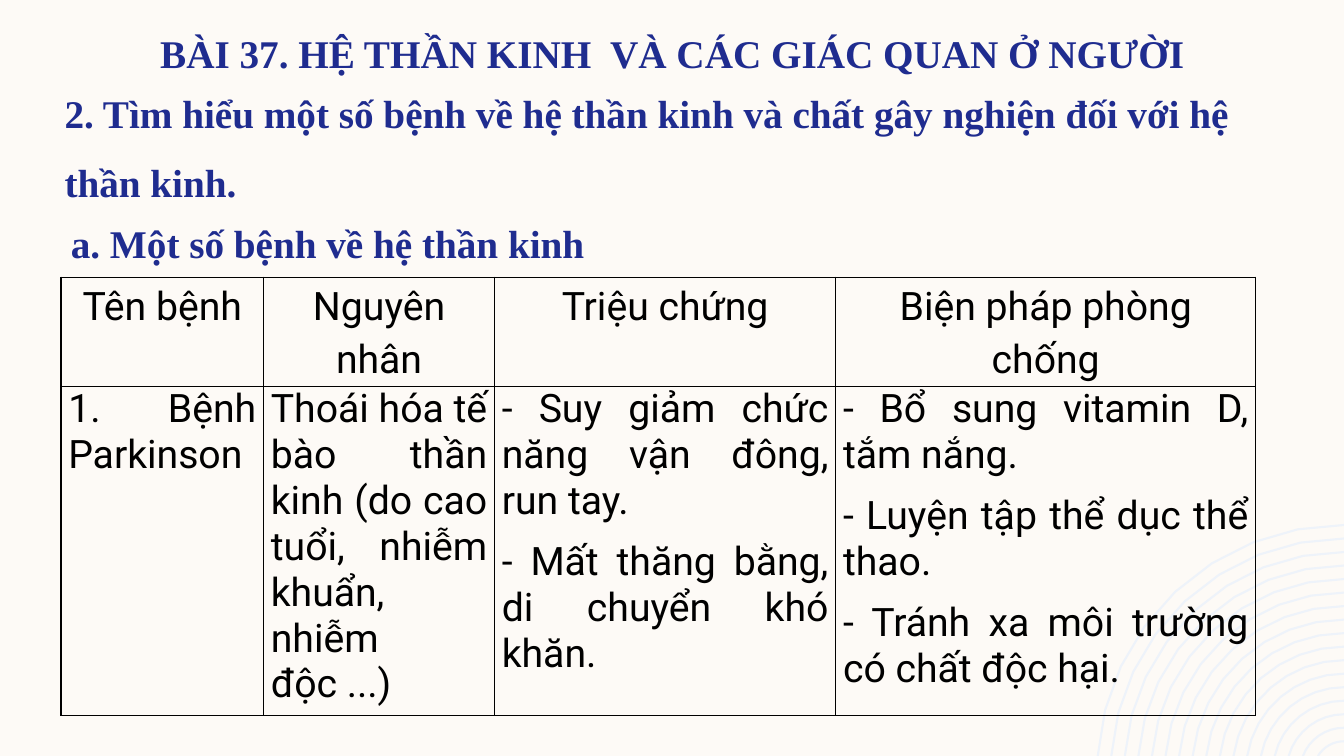
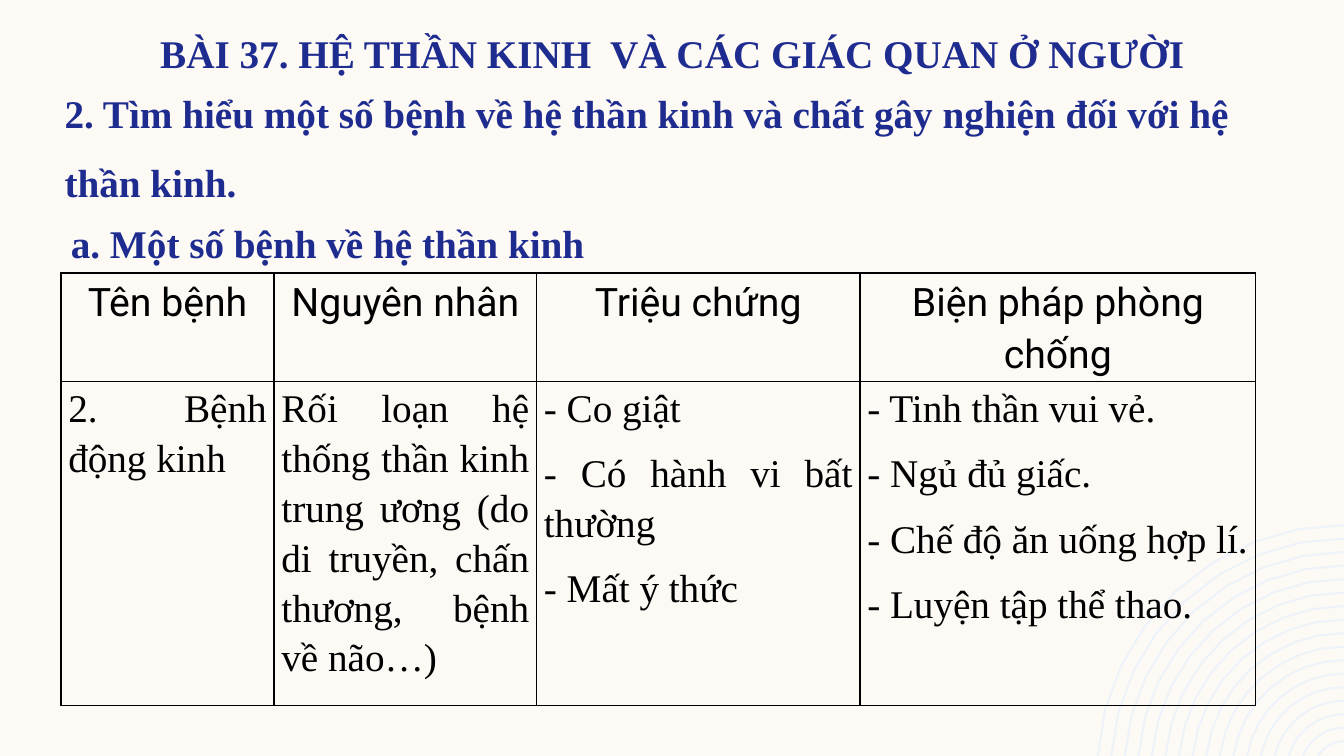
from math import asin, cos, pi, sin

from lxml import etree
from pptx import Presentation
from pptx.dml.color import RGBColor
from pptx.enum.text import PP_ALIGN as Align
from pptx.util import Pt

PX = 9525  # EMU in one px, 96 px to the inch
WIDTH, HEIGHT = 1280, 720
CREAM, NAVY, PALE_BLUE, BLACK = "FDFAF6", "1F2C8F", "EEF3FA", "000000"
SERIF, SANS = "Times New Roman", "Roboto"
DRAWING = "http://schemas.openxmlformats.org/drawingml/2006/main"

# Rings in the bottom right corner
RING_COUNT, RING_WIDTH = 17, 2
OUTER_RADIUS, INNER_RADIUS = 235, 29
CENTRE_X, CENTRE_Y = WIDTH, 735
ARC_STEPS = 8

# left, top, width, height, top inset, alignment, line spacing, before, after, text
HEADINGS = [
    (0, 8, 1280, 62, 0, Align.CENTER, Pt(48.8), 0, 0,
     "BÀI 37. HỆ THẦN KINH  VÀ CÁC GIÁC QUAN Ở NGƯỜI"),
    (52, 65, 1184, 62, 0, Align.LEFT, Pt(48.8), 0, 0,
     "2. Tìm hiểu một số bệnh về hệ thần kinh và chất gây nghiện đối với hệ thần kinh."),
    (58, 197, 640, 59, 5, Align.JUSTIFY, 1.15, 8, 3,
     "a. Một số bệnh về hệ thần kinh"),
]

TABLE_LEFT = 58
TABLE_HEADER = ["Tên bệnh", "Nguyên nhân", "Triệu chứng", "Biện pháp phòng chống"]
DISEASES = [
    {
        "top": 264, "columns": [193, 220, 325, 400], "rows": [104, 313],
        "font": SANS, "line_spacing": 1.0,
        "cells": [
            "1. Bệnh Parkinson",
            "Thoái hóa tế bào thần kinh (do cao tuổi, nhiễm khuẩn, nhiễm độc ...)",
            "- Suy giảm chức năng vận đông, run tay.\n"
            "- Mất thăng bằng, di chuyển khó khăn.",
            "- Bổ sung vitamin D, tắm nắng.\n"
            "- Luyện tập thể dục thể thao.\n"
            "- Tránh xa môi trường có chất độc hại.",
        ],
    },
    {
        "top": 260, "columns": [203, 250, 308, 377], "rows": [103, 309],
        "font": SERIF, "line_spacing": 1.15,
        "cells": [
            "2. Bệnh động kinh",
            "Rối loạn hệ thống thần kinh trung ương (do di truyền, chấn thương, bệnh về não…)",
            "- Co giật\n- Có hành vi bất thường\n- Mất ý thức",
            "- Tinh thần vui vẻ.\n- Ngủ đủ giấc.\n- Chế độ ăn uống hợp lí.\n- Luyện tập thể thao.",
        ],
    },
]


def rgb(hex_colour):
    return RGBColor.from_string(hex_colour)


def format_text(text_frame, font_name, colour, bold, align, line_spacing, before, after):
    for paragraph in text_frame.paragraphs:
        paragraph.alignment = align
        paragraph.line_spacing = line_spacing
        paragraph.space_before, paragraph.space_after = Pt(before), Pt(after)
        for run in paragraph.runs:
            run.font.name, run.font.size, run.font.bold = font_name, Pt(28), bold
            run.font.color.rgb = rgb(colour)


presentation = Presentation()
presentation.slide_width, presentation.slide_height = WIDTH * PX, HEIGHT * PX
background = presentation.slide_master.background.fill
background.solid()
background.fore_color.rgb = rgb(CREAM)
blank_layout = presentation.slide_layouts[6]
slides = [presentation.slides.add_slide(blank_layout) for _ in DISEASES]

# Shared parts: drawn on the first slide, then moved to the layout
shapes = slides[0].shapes
arcs = []
for ring in range(RING_COUNT):
    radius = OUTER_RADIUS - ring * (OUTER_RADIUS - INNER_RADIUS) / (RING_COUNT - 1)
    start = asin((CENTRE_Y - HEIGHT) / radius)  # where the ring leaves the slide
    angles = [start + (pi / 2 - start) * step / ARC_STEPS for step in range(ARC_STEPS + 1)]
    arcs.append([((CENTRE_X - radius * cos(angle)) * PX, (CENTRE_Y - radius * sin(angle)) * PX)
                 for angle in angles])
builder = shapes.build_freeform(*arcs[0][0])
for arc in arcs:
    if arc is not arcs[0]:
        builder.move_to(*arc[0])
    builder.add_line_segments(arc[1:], close=False)
rings = builder.convert_to_shape()
rings.shadow.inherit = False
rings.fill.background()
rings.line.color.rgb = rgb(PALE_BLUE)
rings.line.width = RING_WIDTH * PX

for left, top, width, height, inset, align, spacing, before, after, text in HEADINGS:
    heading = shapes.add_textbox(left * PX, top * PX, width * PX, height * PX)
    text_frame = heading.text_frame
    text_frame.word_wrap = True
    text_frame.margin_top = inset * PX
    text_frame.text = text
    format_text(text_frame, SERIF, NAVY, True, align, spacing, before, after)

for shape in list(shapes):
    blank_layout.shapes._spTree.append(shape._element)

for slide, disease in zip(slides, DISEASES):
    columns, rows = disease["columns"], disease["rows"]
    table = slide.shapes.add_table(
        len(rows), len(columns), TABLE_LEFT * PX, disease["top"] * PX,
        sum(columns) * PX, sum(rows) * PX).table
    table.first_row = table.horz_banding = False
    for column, width in zip(table.columns, columns):
        column.width = width * PX
    for row, height in zip(table.rows, rows):
        row.height = height * PX

    row_styles = [
        (TABLE_HEADER, SANS, Align.CENTER, 1.15),
        (disease["cells"], disease["font"], Align.JUSTIFY, disease["line_spacing"]),
    ]
    for row, (texts, font_name, align, spacing) in zip(table.rows, row_styles):
        for cell, text in zip(row.cells, texts):
            cell.margin_left = cell.margin_right = 7 * PX
            cell.margin_top = cell.margin_bottom = 0
            cell.text_frame.text = text
            format_text(cell.text_frame, font_name, BLACK, False, align, spacing, 8, 3)
            cell.fill.background()
            properties = cell._tc.get_or_add_tcPr()
            for index, side in enumerate("LRTB"):
                properties.insert(index, etree.fromstring(
                    f'<a:ln{side} xmlns:a="{DRAWING}" w="{Pt(1)}"><a:solidFill>'
                    f'<a:srgbClr val="{BLACK}"/></a:solidFill></a:ln{side}>'))

presentation.save("out.pptx")
